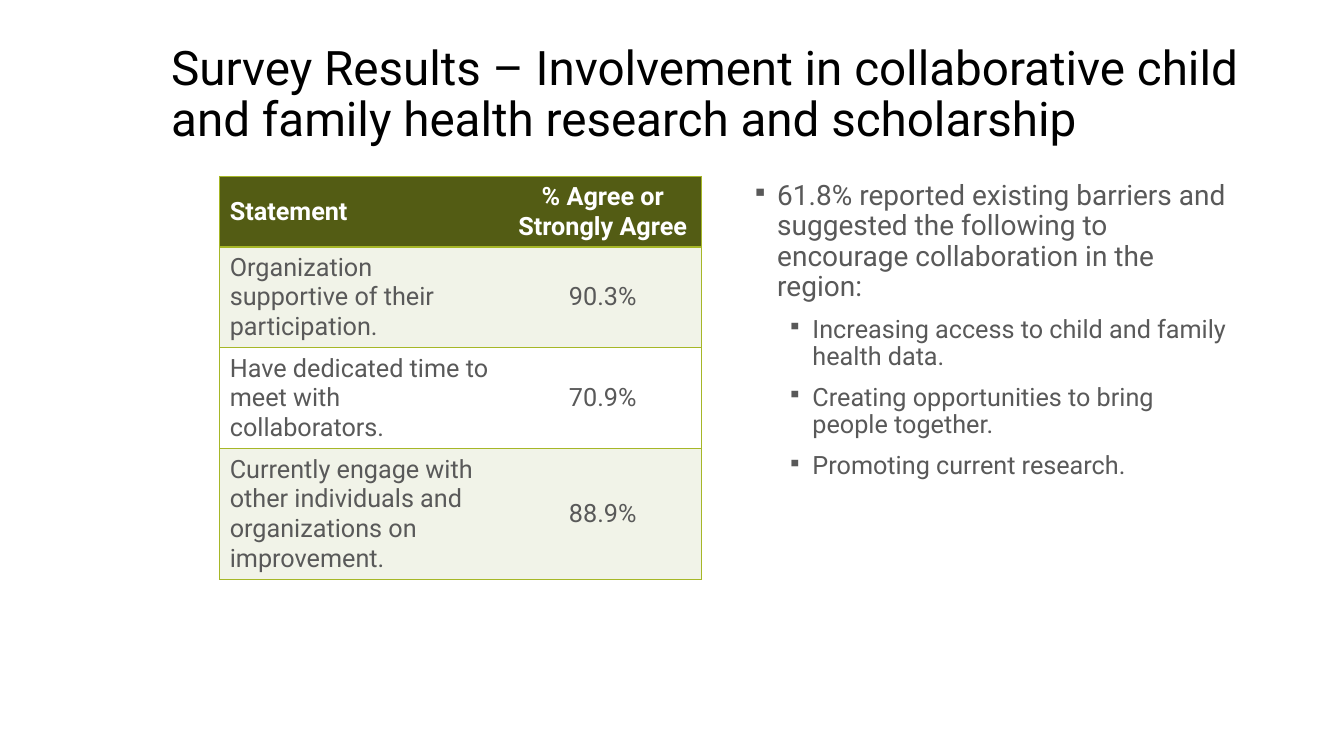
"""Build the survey results slide on collaborative child and family health research."""
from lxml.etree import SubElement
from pptx import Presentation
from pptx.dml.color import RGBColor
from pptx.enum.text import MSO_ANCHOR, PP_ALIGN
from pptx.oxml.ns import qn
from pptx.util import Inches, Pt

BLACK = RGBColor(0x00, 0x00, 0x00)
WHITE = RGBColor(0xFF, 0xFF, 0xFF)
GRAY = RGBColor(0x59, 0x59, 0x59)
OLIVE = RGBColor(0x53, 0x5C, 0x14)
LIME = RGBColor(0xA6, 0xB7, 0x27)
PALE = RGBColor(0xF1, 0xF3, 0xE8)

HEADLINE = ("Survey Results – Involvement in collaborative child "
            "and family health research and scholarship")
AGREEMENT = [
    ("Statement", "% Agree or Strongly Agree"),
    ("Organization supportive of their participation.", "90.3%"),
    ("Have dedicated time to meet with collaborators.", "70.9%"),
    ("Currently engage with other individuals and organizations on improvement.", "88.9%"),
]
BARRIERS = [
    (0, "61.8% reported existing barriers and suggested the following "
        "to encourage collaboration in the region:"),
    (1, "Increasing access to child and family health data."),
    (1, "Creating opportunities to bring people together."),
    (1, "Promoting current research."),
]


class SurveySlide:
    """Hold the style and the slide; lengths are percentages of the slide's size."""

    typeface = "Roboto"
    bullet_sizes = (20, 18)
    bullet_indents = (0.3, 0.65)

    def __init__(self, deck):
        self.deck = deck
        self.slide = deck.slides.add_slide(deck.slide_layouts[6])

    def across(self, share):
        return round(self.deck.slide_width * share / 100)

    def down(self, share):
        return round(self.deck.slide_height * share / 100)

    def place(self, left, top, width, height):
        return self.across(left), self.down(top), self.across(width), self.down(height)

    def style(self, paragraph, size, color, bold=False):
        font = paragraph.font
        font.name, font.size, font.bold = self.typeface, Pt(size), bold
        font.color.rgb = color

    def text_frame(self, area):
        frame = self.slide.shapes.add_textbox(*self.place(*area)).text_frame
        frame.word_wrap = True
        return frame

    def title(self, wording, area):
        frame = self.text_frame(area)
        frame.vertical_anchor = MSO_ANCHOR.BOTTOM
        headline = frame.paragraphs[0]
        headline.text = wording
        headline.line_spacing = 0.9
        self.style(headline, 34, BLACK)

    def bullets(self, points, area):
        frame = self.text_frame(area)
        for index, (level, wording) in enumerate(points):
            point = frame.add_paragraph() if index else frame.paragraphs[0]
            point.text = wording
            point.level = level
            point.line_spacing = 0.9
            if index:
                point.space_before = Pt(10)
            properties = point._p.get_or_add_pPr()
            properties.set("marL", str(Inches(self.bullet_indents[level])))
            properties.set("indent", str(Inches(-0.25)))
            SubElement(properties, qn("a:buSzPct"), val="80000")
            SubElement(properties, qn("a:buChar"), char="▪")
            self.style(point, self.bullet_sizes[level], GRAY)

    def borders(self, cell, open_side):
        properties = cell._tc.get_or_add_tcPr()
        for side in ("lnL", "lnR", "lnT", "lnB"):
            line = SubElement(properties, qn(f"a:{side}"), w=str(Pt(1)))
            if side == open_side:
                SubElement(line, qn("a:noFill"))
            else:
                fill = SubElement(line, qn("a:solidFill"))
                SubElement(fill, qn("a:srgbClr"), val=str(LIME))

    def table(self, rows, left, top, widths, heights):
        area = self.place(left, top, sum(widths), sum(heights))
        grid = self.slide.shapes.add_table(len(rows), len(widths), *area).table
        grid.horz_banding = False
        for column, width in zip(grid.columns, widths):
            column.width = self.across(width)
        for r, (row, height) in enumerate(zip(rows, heights)):
            grid.rows[r].height = self.down(height)
            header = r == 0
            band = OLIVE if header else PALE if r % 2 else WHITE
            for c, wording in enumerate(row):
                cell = grid.cell(r, c)
                cell.text = wording
                cell.vertical_anchor = MSO_ANCHOR.MIDDLE
                self.borders(cell, "lnL" if c else "lnR")
                cell.fill.solid()
                cell.fill.fore_color.rgb = band
                entry = cell.text_frame.paragraphs[0]
                entry.alignment = PP_ALIGN.CENTER if c else PP_ALIGN.LEFT
                self.style(entry, 18, WHITE if header else GRAY, header)


def main():
    deck = Presentation()
    deck.slide_width, deck.slide_height = Inches(13.33), Inches(7.5)
    survey = SurveySlide(deck)
    survey.title(HEADLINE, (12, 2.67, 83.05, 17.47))
    survey.bullets(BARRIERS, (54.84, 23.33, 37.51, 68.13))
    survey.table(AGREEMENT, 16.35, 23.33, (21.15, 14.7), (9.07, 13.07, 13.07, 16.93))
    deck.save("out.pptx")


if __name__ == "__main__":
    main()
